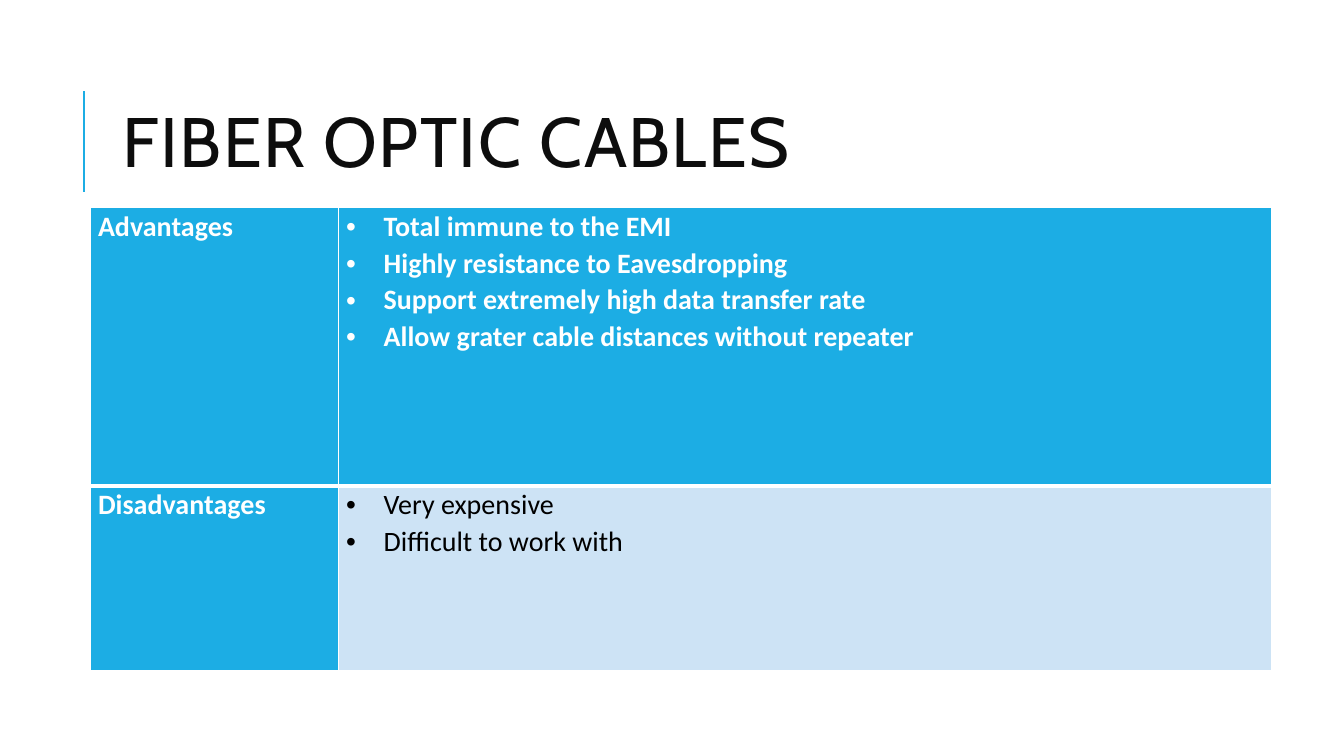
from dataclasses import dataclass

from lxml import etree
from pptx import Presentation
from pptx.dml.color import RGBColor
from pptx.enum.shapes import MSO_CONNECTOR
from pptx.enum.text import MSO_ANCHOR, MSO_AUTO_SIZE, PP_ALIGN
from pptx.oxml.ns import qn
from pptx.util import Cm, Pt

STRAIGHT = MSO_CONNECTOR.STRAIGHT
MIDDLE = MSO_ANCHOR.MIDDLE
LEFT = PP_ALIGN.LEFT
NO_AUTOFIT = MSO_AUTO_SIZE.NONE
TITLE_ONLY = 5


@dataclass(frozen=True)
class Theme:
    accent: str = "1CADE4"
    pale: str = "CDE3F5"
    white: str = "FFFFFF"
    black: str = "000000"
    ink: str = "0D0D0D"
    title_font: str = "Cabin"
    body_font: str = "Calibri"
    bullet_font: str = "Arial"
    title_size: int = 50
    body_size: int = 20
    thin: int = 1
    thick: int = 3


def set_format(target, values):
    for name, value in values.items():
        setattr(target, name, value)


class SlideBuilder:
    def __init__(self, deck, theme):
        self.theme = theme
        self.slide = deck.slides.add_slide(deck.slide_layouts[TITLE_ONLY])

    def style_font(self, font, color, **values):
        set_format(font, values)
        font.color.rgb = RGBColor.from_string(color)

    def rule(self, x, top, bottom):
        line = self.slide.shapes.add_connector(STRAIGHT, Cm(x), Cm(bottom), Cm(x), Cm(top))
        line.line.width = Pt(1.5)
        line.line.color.rgb = RGBColor.from_string(self.theme.accent)
        etree.SubElement(line._element.spPr, qn("a:effectLst"))

    def title(self, text, left, top, width, height):
        box = self.slide.shapes.title
        set_format(box, {"left": Cm(left), "top": Cm(top),
                         "width": Cm(width), "height": Cm(height)})
        frame = box.text_frame
        set_format(frame, {"text": text, "word_wrap": True,
                           "auto_size": NO_AUTOFIT, "vertical_anchor": MIDDLE})
        para = frame.paragraphs[0]
        set_format(para, {"alignment": LEFT, "line_spacing": 0.8})
        span = para.runs[0]
        self.style_font(span.font, self.theme.ink, name=self.theme.title_font,
                        size=Pt(self.theme.title_size))
        span._r.get_or_add_rPr().set("spc", "100")

    def bullet(self, para):
        properties = para._p.get_or_add_pPr()
        properties.set("marL", str(Cm(0.95)))
        properties.set("indent", str(-Cm(0.95)))
        etree.SubElement(properties, qn("a:buFont"), typeface=self.theme.bullet_font)
        etree.SubElement(properties, qn("a:buChar"), char="•")

    def borders(self, cell, widths):
        properties = cell._tc.get_or_add_tcPr()
        for side, width in widths.items():
            line = etree.SubElement(properties, qn(f"a:ln{side}"), w=str(Pt(width)))
            fill = etree.SubElement(line, qn("a:solidFill"))
            etree.SubElement(fill, qn("a:srgbClr"), val=self.theme.white)

    def cell(self, cell, lines, fill, color, bold, bulleted):
        set_format(cell, {"margin_left": Cm(0.18), "margin_right": Cm(0.18),
                          "margin_top": 0, "margin_bottom": 0})
        cell.fill.solid()
        cell.fill.fore_color.rgb = RGBColor.from_string(fill)
        cell.text_frame.text = "\n".join(lines)
        for para in cell.text_frame.paragraphs:
            para.line_spacing = 1.07
            if bulleted:
                self.bullet(para)
            self.style_font(para.font, color, name=self.theme.body_font,
                            size=Pt(self.theme.body_size), bold=bold)
            for span in para.runs:
                self.style_font(span.font, color, name=self.theme.body_font,
                                size=Pt(self.theme.body_size), bold=bold)

    def comparison(self, rows, left, top, widths, heights):
        """Table with a heading in the first column and a bulleted list in the second."""
        theme = self.theme
        table = self.slide.shapes.add_table(
            len(rows), len(widths), Cm(left), Cm(top),
            Cm(sum(widths)), Cm(sum(heights))).table
        set_format(table, {"first_row": False, "horz_banding": False})
        for column, width in zip(table.columns, widths):
            column.width = Cm(width)
        for index, (heading, points) in enumerate(rows):
            table.rows[index].height = Cm(heights[index])
            first = index == 0
            edges = {"L": theme.thin, "R": theme.thin,
                     "T": theme.thin if first else theme.thick,
                     "B": theme.thick if first else theme.thin}
            heading_cell, list_cell = table.rows[index].cells
            for cell in (heading_cell, list_cell):
                self.borders(cell, edges)
            self.cell(heading_cell, [heading], theme.accent, theme.white, True, False)
            self.cell(list_cell, points, theme.accent if first else theme.pale,
                      theme.white if first else theme.black, first, True)


def main():
    deck = Presentation()
    set_format(deck, {"slide_width": Cm(33.87), "slide_height": Cm(19.05)})
    page = SlideBuilder(deck, Theme())
    page.rule(2.11, 2.29, 4.83)
    page.title("FIBER OPTIC CABLES", 2.84, 1.63, 27, 4.17)
    page.comparison(
        [("Advantages", ["Total immune to the EMI",
                         "Highly resistance to Eavesdropping",
                         "Support extremely high data transfer rate",
                         "Allow grater cable distances without repeater"]),
         ("Disadvantages", ["Very expensive", "Difficult to work with"])],
        left=2.29, top=5.23, widths=[6.25, 23.5], heights=[7.01, 4.67])
    deck.save("out.pptx")


if __name__ == "__main__":
    main()
